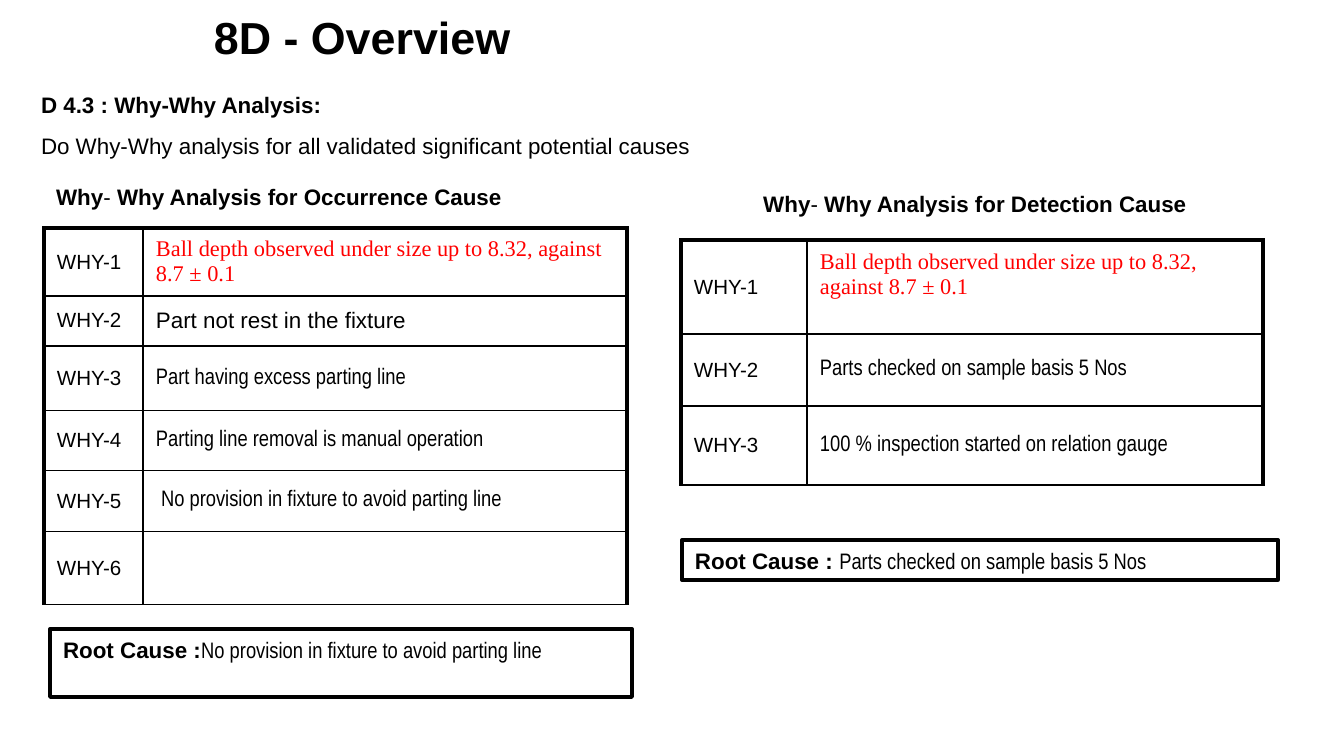
from lxml.etree import SubElement
from pptx import Presentation
from pptx.dml.color import RGBColor
from pptx.enum.shapes import MSO_SHAPE
from pptx.enum.text import MSO_ANCHOR, PP_ALIGN
from pptx.oxml.ns import qn
from pptx.util import Pt

PX = 9144000 / 1344
COLORS = {"ink": "000000", "paper": "FFFFFF", "problem": "FF0000"}
SANS, NARROW, SERIF = "Arial", "Arial Narrow", "Times New Roman"
THIN, THICK = 1, 2.25
INSET_X, INSET_Y = 13, 7

TITLE = "8D - Overview"
INTRO = [
    [("D 4.3 : Why-Why Analysis:", SANS, True)],
    [("Do Why-Why analysis for all validated significant potential causes", SANS, False)],
]
PROBLEM = "Ball depth observed under size up to 8.32, against 8.7 ± 0.1"
ANALYSES = [
    {
        "cause": "Occurrence",
        "heading_box": (43, 179, 715, 38),
        "heading_align": PP_ALIGN.LEFT,
        "table_at": (44, 228),
        "columns": (99, 484),
        "whys": [
            (67, PROBLEM, SERIF, "problem"),
            (50, "Part not rest in the fixture", SANS, "ink"),
            (65, "Part having excess parting line", NARROW, "ink"),
            (60, "Parting line removal is manual operation", NARROW, "ink"),
            (61, " No provision in fixture to avoid parting line", NARROW, "ink"),
            (73, "", NARROW, "ink"),
        ],
        "problem_bottom": INSET_Y,
        "root_box": (50, 629, 582, 68),
        "root": ("Root Cause :", "No provision in fixture to avoid parting line"),
    },
    {
        "cause": "Detection",
        "heading_box": (672, 186, 606, 38),
        "heading_align": PP_ALIGN.CENTER,
        "table_at": (681, 240),
        "columns": (126, 456),
        "whys": [
            (94, PROBLEM, SERIF, "problem"),
            (72, "Parts checked on sample basis 5 Nos", NARROW, "ink"),
            (79, "100 % inspection started on relation gauge", NARROW, "ink"),
        ],
        "problem_bottom": 32,
        "root_box": (682, 540, 596, 40),
        "root": ("Root Cause : ", "Parts checked on sample basis 5 Nos"),
    },
]


def px(length):
    return round(length * PX)


def color(name):
    return RGBColor.from_string(COLORS[name])


def add_run(paragraph, text, font, bold=False, size=12, ink="ink"):
    run = paragraph.add_run()
    run.text = text
    run.font.name = font
    run.font.size = Pt(size)
    run.font.bold = bold
    run.font.color.rgb = color(ink)


def fill_frame(frame, lines, size=12, spacing=None, align=PP_ALIGN.LEFT):
    frame.word_wrap = True
    frame.margin_left = frame.margin_right = px(INSET_X)
    frame.margin_top = frame.margin_bottom = px(INSET_Y)
    for index, runs in enumerate(lines):
        paragraph = frame.add_paragraph() if index else frame.paragraphs[0]
        paragraph.alignment = align
        paragraph.line_spacing = spacing
        for text, font, bold in runs:
            add_run(paragraph, text, font, bold, size)


def add_text(slide, box, lines, **options):
    frame = slide.shapes.add_textbox(*map(px, box)).text_frame
    fill_frame(frame, lines, **options)
    return frame


def set_borders(cell, widths):
    properties = cell._tc.get_or_add_tcPr()
    for side, width in zip("LRTB", widths):
        line = SubElement(properties, qn(f"a:ln{side}"), w=str(Pt(width)))
        solid = SubElement(line, qn("a:solidFill"))
        SubElement(solid, qn("a:srgbClr"), val=COLORS["ink"])


def fill_cell(cell, text, font, size, ink, bottom, widths):
    cell.margin_left = cell.margin_right = px(INSET_X)
    cell.margin_top = px(INSET_Y)
    cell.margin_bottom = px(bottom)
    cell.vertical_anchor = MSO_ANCHOR.MIDDLE
    if text:
        add_run(cell.text_frame.paragraphs[0], text, font, size=size, ink=ink)
    set_borders(cell, widths)
    cell.fill.background()


def add_why_table(slide, analysis):
    whys, columns = analysis["whys"], analysis["columns"]
    box = (*analysis["table_at"], sum(columns), sum(why[0] for why in whys))
    table = slide.shapes.add_table(len(whys), len(columns), *map(px, box)).table
    table.first_row = table.horz_banding = False
    for column, width in zip(table.columns, columns):
        column.width = px(width)
    for index, (height, answer, font, ink) in enumerate(whys):
        table.rows[index].height = px(height)
        top = THIN if index else THICK
        bottom = INSET_Y if index else analysis["problem_bottom"]
        fill_cell(table.cell(index, 0), f"WHY-{index + 1}", SANS, 11, "ink",
                  INSET_Y, (THICK, THIN, top, THIN))
        fill_cell(table.cell(index, 1), answer, font, 12, ink,
                  bottom, (THIN, THICK, top, THIN))


def add_root_cause(slide, box, label, cause):
    root = slide.shapes.add_shape(MSO_SHAPE.RECTANGLE, *map(px, box))
    root.shadow.inherit = False
    root.fill.solid()
    root.fill.fore_color.rgb = color("paper")
    root.line.color.rgb = color("ink")
    root.line.width = Pt(2)
    root.text_frame.vertical_anchor = MSO_ANCHOR.TOP
    fill_frame(root.text_frame, [[(label, SANS, True), (cause, NARROW, False)]])


def main():
    deck = Presentation()
    deck.slide_width, deck.slide_height = px(1344), px(756)
    slide = deck.slides.add_slide(deck.slide_layouts[6])

    title = add_text(slide, (28, -5, 1286, 84), [[(TITLE, SANS, True)]], size=24)
    title.vertical_anchor = MSO_ANCHOR.MIDDLE
    title.paragraphs[0]._p.get_or_add_pPr().set("marL", str(px(173)))
    add_text(slide, (28, 71, 1285, 82), INTRO, spacing=1.5)

    for analysis in ANALYSES:
        heading = [("Why", SANS, True), ("- ", SANS, False),
                   (f"Why Analysis for {analysis['cause']} Cause", SANS, True)]
        add_text(slide, analysis["heading_box"], [heading],
                 spacing=0.9, align=analysis["heading_align"])
        add_why_table(slide, analysis)
        add_root_cause(slide, analysis["root_box"], *analysis["root"])

    deck.save("out.pptx")


if __name__ == "__main__":
    main()
